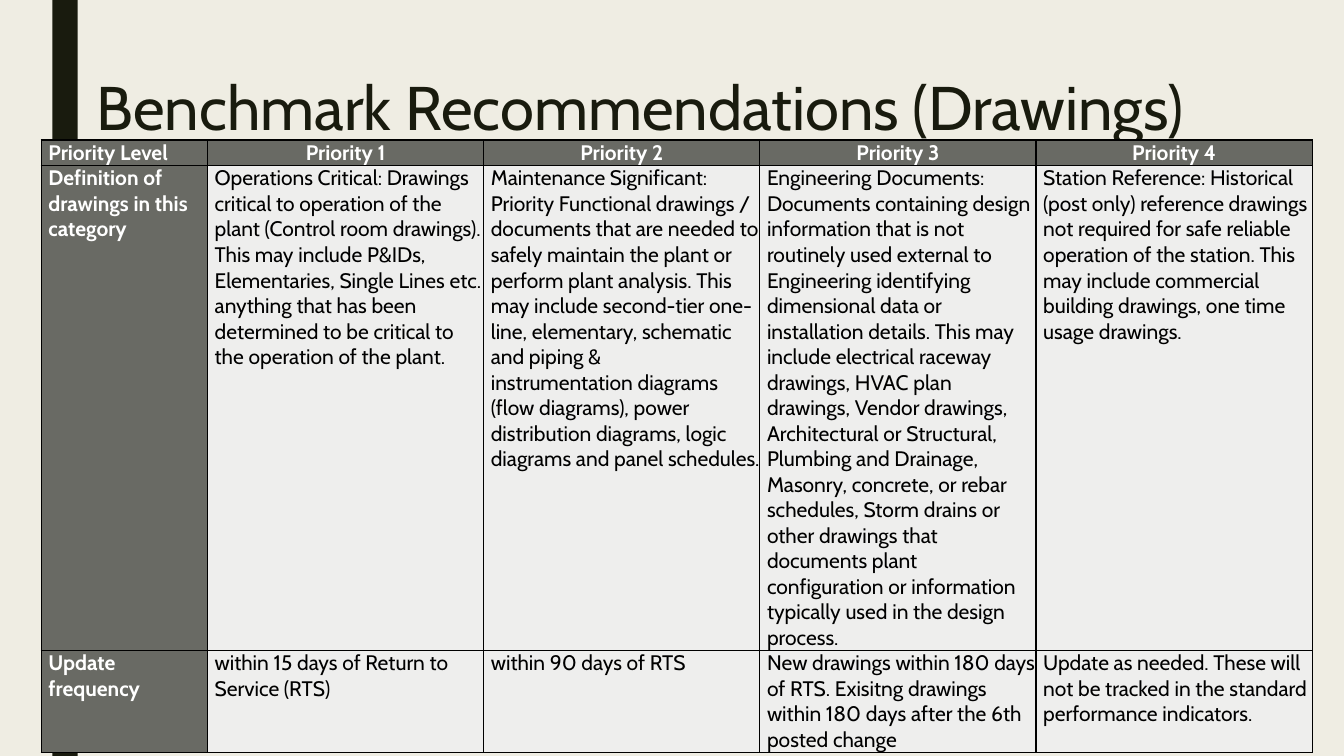
"""Build the slide of benchmark recommendations for drawings."""
from lxml.etree import SubElement
from pptx import Presentation
from pptx.dml.color import RGBColor
from pptx.enum.shapes import MSO_SHAPE as Shape
from pptx.enum.text import MSO_ANCHOR as Anchor, PP_ALIGN as Align
from pptx.oxml.ns import qn
from pptx.util import Cm, Pt

TITLE = "Benchmark Recommendations (Drawings)"
ROWS = [
    ["Priority Level", "Priority 1", "Priority 2", "Priority 3", "Priority 4"],
    [
        "Definition of drawings in this category",
        "Operations Critical: Drawings critical to operation of the plant "
        "(Control room drawings). This may include P&IDs, Elementaries, Single Lines etc. "
        "anything that has been determined to be critical to the operation of the plant.",
        "Maintenance Significant: Priority Functional drawings / documents that are needed "
        "to safely maintain the plant or perform plant analysis. This may include "
        "second-tier one-line, elementary, schematic and piping &\n"
        "instrumentation diagrams (flow diagrams), power distribution diagrams, "
        "logic diagrams and panel schedules.",
        "Engineering Documents:\n"
        "Documents containing design information that is not routinely used external to "
        "Engineering identifying dimensional data or installation details. This may include "
        "electrical raceway drawings, HVAC plan drawings, Vendor drawings, Architectural or "
        "Structural, Plumbing and Drainage, Masonry, concrete, or rebar schedules, Storm "
        "drains or other drawings that documents plant configuration or information "
        "typically used in the design process.",
        "Station Reference: Historical (post only) reference drawings not required for safe "
        "reliable operation of the station. This may include commercial building drawings, "
        "one time usage drawings.",
    ],
    [
        "Update frequency",
        "within 15 days of Return to Service (RTS)",
        "within 90 days of RTS",
        "New drawings within 180 days of RTS. Exisitng drawings within 180 days after "
        "the 6th posted change",
        "Update as needed. These will not be tracked in the standard performance indicators.",
    ],
]
COLORS = {
    "background": "EFEDE3",
    "dark": "191B0E",
    "header": "696A64",
    "body": "EEEEED",
    "white": "FFFFFF",
    "black": "000000",
}
FONT = "Cabin"
COLUMN_WIDTHS = [4.19] + [6.96] * 4
ROW_HEIGHTS = [0.61, 11.46, 2.51]


def color(name):
    return RGBColor.from_string(COLORS[name])


def paint(target, name):
    target.fill.solid()
    target.fill.fore_color.rgb = color(name)


def add_text(para, text, size, tint, bold=False):
    for index, line in enumerate(text.split("\n")):
        if index:
            para.add_line_break()
        span = para.add_run()
        span.text = line
        span.font.name = FONT
        span.font.size = Pt(size)
        span.font.bold = bold
        span.font.color.rgb = color(tint)


def add_borders(cell):
    properties = cell._tc.get_or_add_tcPr()
    for side in ("lnL", "lnR", "lnT", "lnB"):
        line = SubElement(properties, qn(f"a:{side}"), w=str(Pt(1)))
        fill = SubElement(line, qn("a:solidFill"))
        SubElement(fill, qn("a:srgbClr"), val=COLORS["black"])


def fill_cell(cell, text, row, column):
    is_header = row == 0 or column == 0
    add_borders(cell)
    paint(cell, "header" if is_header else "body")
    cell.margin_left = cell.margin_right = cell.margin_top = cell.margin_bottom = 0
    para = cell.text_frame.paragraphs[0]
    if row == 0 and column > 0:
        para.alignment = Align.CENTER
        cell.vertical_anchor = Anchor.MIDDLE
    else:
        para.alignment = Align.LEFT
        cell.vertical_anchor = Anchor.TOP
        para._p.get_or_add_pPr().set("marL", str(Cm(0.18)))
    add_text(para, text, 15, "white" if is_header else "black", is_header)


def add_title(page):
    box = page.shapes.title
    box.left, box.top, box.width, box.height = Cm(2.18), Cm(1.83), Cm(28.3), Cm(4.22)
    box.text_frame.vertical_anchor = Anchor.TOP
    para = box.text_frame.paragraphs[0]
    para.alignment = Align.LEFT
    para.line_spacing = 0.89
    add_text(para, TITLE, 44, "dark")


def add_priority_table(page):
    frame = page.shapes.add_table(
        len(ROWS), len(COLUMN_WIDTHS), Cm(1.04), Cm(3.53),
        Cm(sum(COLUMN_WIDTHS)), Cm(sum(ROW_HEIGHTS)),
    )
    table = frame.table
    for column, width in zip(table.columns, COLUMN_WIDTHS):
        column.width = Cm(width)
    for row, height in zip(table.rows, ROW_HEIGHTS):
        row.height = Cm(height)
    for row, texts in enumerate(ROWS):
        for column, text in enumerate(texts):
            fill_cell(table.cell(row, column), text, row, column)


def main():
    deck = Presentation()
    deck.slide_width, deck.slide_height = Cm(33.87), Cm(19.05)
    page = deck.slides.add_slide(deck.slide_layouts[5])
    paint(page.background, "background")
    bar = page.shapes.add_shape(Shape.RECTANGLE, Cm(1.32), 0, Cm(0.64), deck.slide_height)
    bar.shadow.inherit = False
    paint(bar, "dark")
    bar.line.fill.background()
    add_title(page)
    add_priority_table(page)
    deck.save("out.pptx")


if __name__ == "__main__":
    main()
